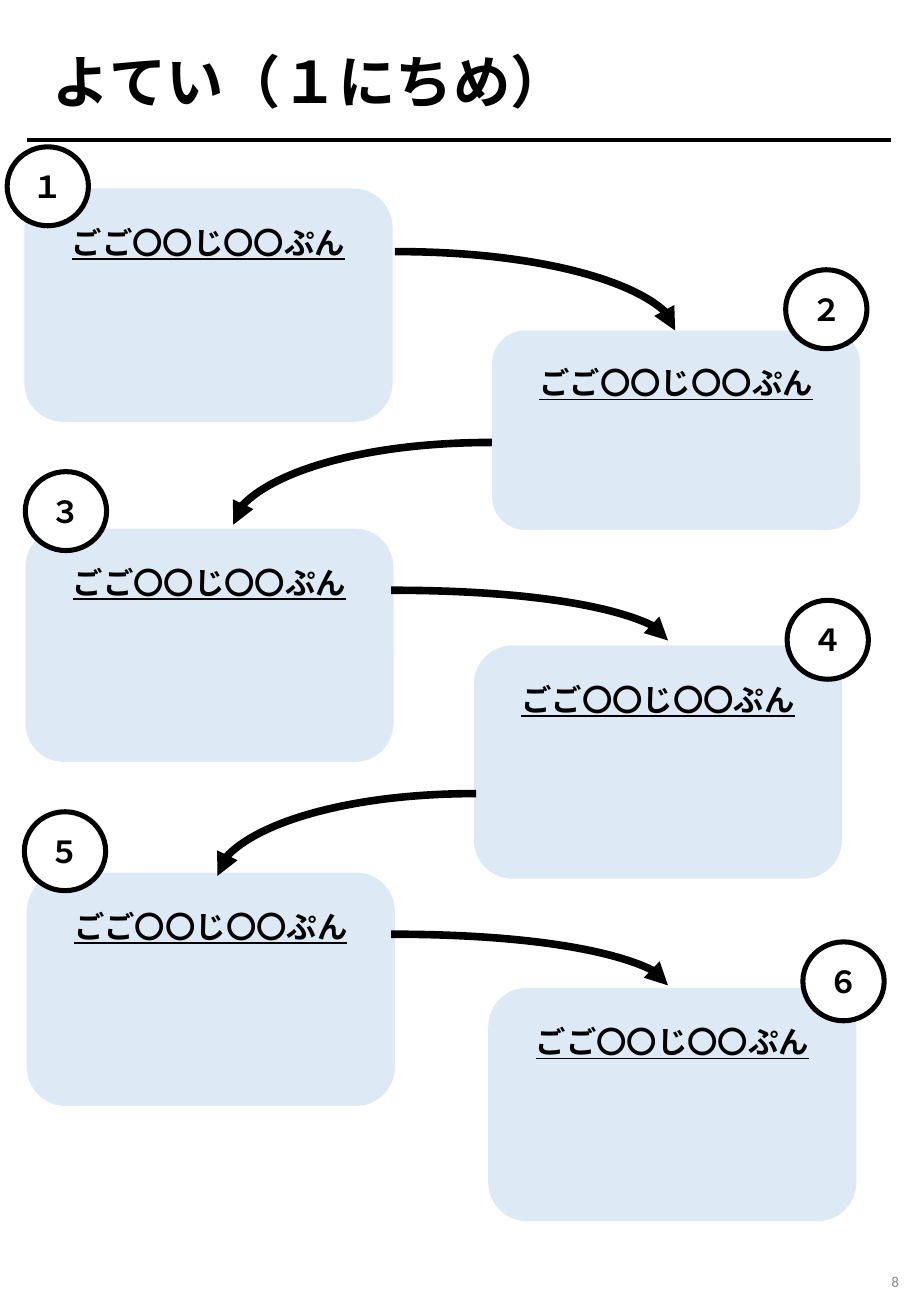
from lxml import etree
from pptx import Presentation
from pptx import util as u
from pptx.dml.color import RGBColor
from pptx.enum import shapes, text
from pptx.oxml.ns import qn

FONT = "Calibri"
BLACK, WHITE, PALE_BLUE, GREY = "000000", "FFFFFF", "DDEAF6", "888888"

# Content (lengths in cm)
TITLE = "よてい（１にちめ）"
TIME = "ごご〇〇じ〇〇ぷん"
PAGE = "8"
CARD_W, CARD_H = 7.7, 4.88
BADGE_W, BADGE_H = 1.7, 1.65
# number, card (left, top, height), badge (left, top)
STEPS = [
    ("１", (0.51, 3.94, CARD_H), (0.15, 3.07)),
    ("２", (10.29, 6.91, 4.17), (16.43, 5.64)),
    ("３", (0.53, 11.05, CARD_H), (0.53, 9.86)),
    ("４", (9.91, 13.49, CARD_H), (16.46, 12.55)),
    ("５", (0.56, 18.24, CARD_H), (0.51, 16.97)),
    ("６", (10.21, 20.65, CARD_H), (16.79, 19.69)),
]
# start and end of each arrow between steps
ARROWS = [
    (8.26, 5.26, 14.12, 6.91),
    (10.29, 9.25, 4.88, 10.97),
    (8.18, 12.34, 13.97, 13.39),
    (9.96, 16.59, 4.55, 18.31),
    (8.18, 19.53, 13.97, 20.6),
]


def color(value):
    return RGBColor.from_string(value)


def cm(*values):
    return [u.Cm(v) for v in values]


def write(sp, content, size, align, anchor, ink=BLACK, bold=True):
    tf = sp.text_frame
    tf.word_wrap = True
    tf.auto_size = text.MSO_AUTO_SIZE.NONE
    tf.vertical_anchor = anchor
    p = tf.paragraphs[0]
    p.text = content
    p.alignment = align
    p.font.name, p.font.size, p.font.bold = FONT, u.Pt(size), bold
    p.font.color.rgb = color(ink)
    return p


def add_box(s, kind, box, fill, outline=None):
    sp = s.shapes.add_shape(kind, *cm(*box))
    sp.shadow.inherit = False
    sp.fill.solid()
    sp.fill.fore_color.rgb = color(fill)
    if outline:
        sp.line.color.rgb = color(BLACK)
        sp.line.width = u.Pt(outline)
    else:
        sp.line.fill.background()
    return sp


def add_line(s, kind, ends, width):
    line = s.shapes.add_connector(kind, *cm(*ends))
    line.line.color.rgb = color(BLACK)
    line.line.width = u.Pt(width)
    etree.SubElement(line._element.spPr, qn("a:effectLst"))
    return line


def add_arrow(s, ends):
    line = add_line(s, shapes.MSO_CONNECTOR.CURVE, ends, 4.5)
    sp_pr = line._element.spPr
    sp_pr.find(qn("a:prstGeom")).set("prst", "curvedConnector2")
    etree.SubElement(sp_pr.find(qn("a:ln")), qn("a:tailEnd"), type="triangle")


def main():
    prs = Presentation()
    prs.slide_width, prs.slide_height = cm(19.05, 27.51)
    s = prs.slides.add_slide(prs.slide_layouts[5])
    center, middle = text.PP_ALIGN.CENTER, text.MSO_ANCHOR.MIDDLE
    top = text.MSO_ANCHOR.TOP

    # Title and the rule below it
    title = s.shapes.title
    title.left, title.top, title.width, title.height = cm(0.56, 0.84, 17.91, 1.7)
    write(title, TITLE, 34, text.PP_ALIGN.LEFT, top)
    title.text_frame.margin_left = u.Cm(0.53)
    add_line(s, shapes.MSO_CONNECTOR.STRAIGHT, (0.56, 2.92, 18.64, 2.92), 2.25)

    # Schedule cards
    for number, (left, y, height), badge in STEPS:
        card = add_box(s, shapes.MSO_SHAPE.ROUNDED_RECTANGLE,
                       (left, y, CARD_W, height), PALE_BLUE)
        p = write(card, TIME, 18, center, top)
        p.font.underline = True
        p.line_spacing = 1.5

    # Arrows from step to step
    for ends in ARROWS:
        add_arrow(s, ends)

    # Numbered badges
    for number, card, badge in STEPS:
        sp = add_box(s, shapes.MSO_SHAPE.OVAL,
                     (*badge, BADGE_W, BADGE_H), WHITE, 3)
        write(sp, number, 18, center, middle)

    # Page number
    page = s.shapes.add_textbox(*cm(14.76, 26.06, 4.29, 1.47))
    write(page, PAGE, 9, text.PP_ALIGN.RIGHT, middle, GREY, False)

    prs.save("out.pptx")


if __name__ == "__main__":
    main()
